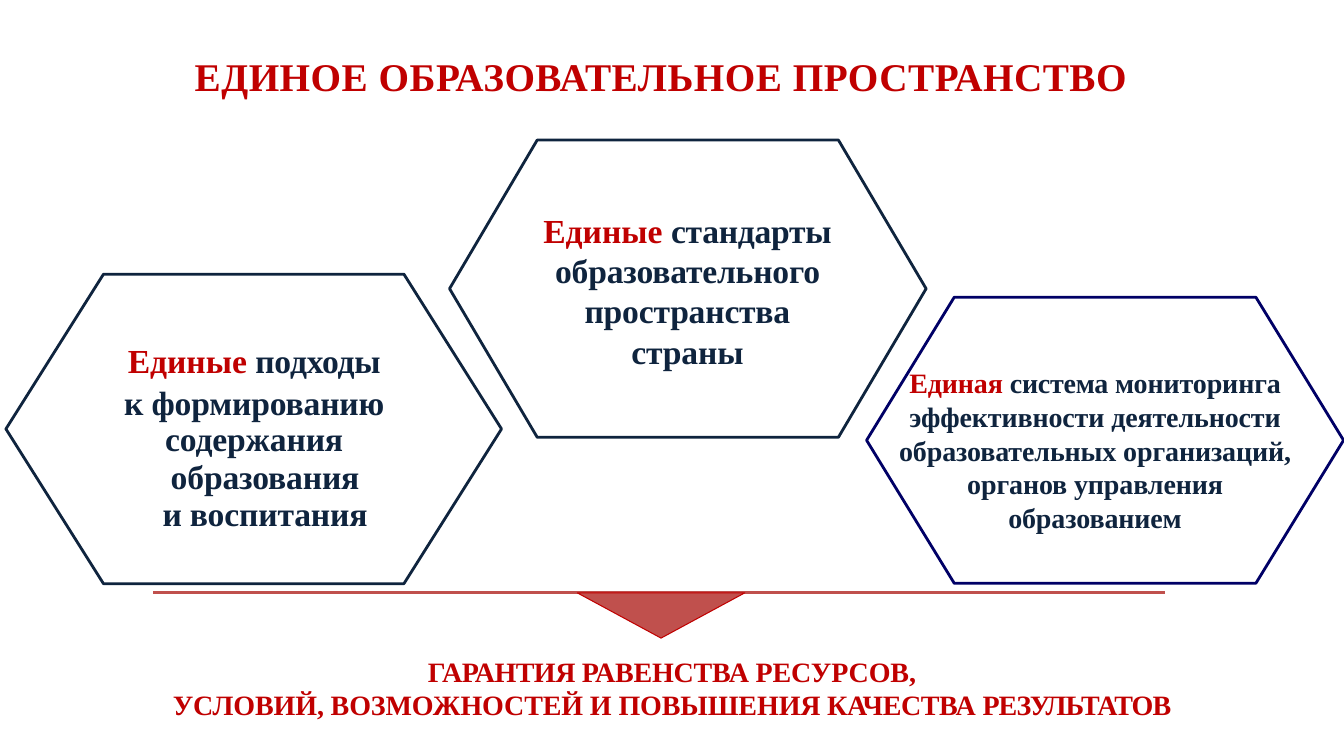
"""Builds the slide on the unified educational space."""
import pptx
import pptx.util
import pptx.dml.color
import pptx.enum.shapes
import pptx.enum.text
import pptx.oxml
from pptx.oxml.ns import qn

Cm, Pt = pptx.util.Cm, pptx.util.Pt
SHAPES = pptx.enum.shapes.MSO_SHAPE
ANCHOR = pptx.enum.text.MSO_ANCHOR

COLOURS = {"red": "C00000", "navy": "0F243E", "blue": "000066",
           "brick": "C0504D", "white": "FFFFFF"}

TITLE = {"box": (0.53, 0.46, 32.26, 2.79), "size": 28, "top": 0.13, "anchor": ANCHOR.MIDDLE,
         "paragraphs": [([("ЕДИНОЕ ОБРАЗОВАТЕЛЬНОЕ ПРОСТРАНСТВО", "red", 40)], {}, 0)]}

GUARANTEE = {"box": (0, 16.46, 33.87, 1.73), "size": 20, "top": 0.03, "anchor": ANCHOR.TOP,
             "paragraphs": [
                 ([("ГАРАНТИЯ ", "red", -40), ("РАВЕНСТВА ", "red", -20),
                   ("РЕСУРСОВ,", "red", -10)], {"space_before": Pt(1)}, 0),
                 ([("УСЛОВИЙ, ВОЗМОЖНОСТЕЙ И ПОВЫШЕНИЯ ", "red", -10),
                   ("КАЧЕСТВА ", "red", -30), ("РЕЗУЛЬТАТОВ", "red", -70)], {}, 0)]}

LOOSE = {"line_spacing": 0.9, "space_before": Pt(3.9)}
EXACT = {"line_spacing": Pt(25.9), "space_before": Pt(0.4)}

HEXAGONS = [
    {"outline": (0.15, 6.91, 12.49, 7.8), "inset": 2.46, "fill": "white", "line": "navy",
     "text": {"box": (1.45, 8.56, 9.88, 4.9), "size": 24, "top": 0.13, "anchor": ANCHOR.TOP,
              "paragraphs": [
                  ([("Единые ", "red", 0), ("подходы", "navy", -20)], LOOSE, 0.03),
                  ([("к формированию содержания", "navy", -10)], LOOSE, 0.03),
                  ([("образования", "navy", -10)], EXACT, 0.58),
                  ([("и воспитания", "navy", -10)], EXACT, 0.58)]}},
    {"outline": (11.33, 3.53, 12.01, 7.49), "inset": 2.21, "fill": None, "line": "navy",
     "text": {"box": (12.12, 5.13, 10.41, 4.27), "size": 24, "top": 0.15, "anchor": ANCHOR.TOP,
              "paragraphs": [
                  ([("Единые ", "red", 0), ("стандарты", "navy", -20)], {}, 0),
                  ([("образовательного пространства", "navy", -15)], {}, 0),
                  ([("страны", "navy", -10)], {}, 0)]}},
    {"outline": (21.84, 7.49, 12.02, 7.21), "inset": 2.21, "fill": None, "line": "blue",
     "text": {"box": (22.5, 9.09, 10.19, 4.42), "size": 20, "top": 0.13, "anchor": ANCHOR.TOP,
              "paragraphs": [
                  ([("Единая ", "red", -10), ("система ", "navy", -20),
                    ("мониторинга эффективности деятельности", "navy", -10)], {}, 0),
                  ([("образовательных организаций,", "navy", -10)], {}, 0),
                  ([("органов управления образованием", "navy", -10)], {}, 0)]}},
]

RULE = {"left": 3.86, "right": 29.36, "y": 14.94}
POINTER = (14.55, 14.94, 4.22, 1.14)


def colour(name):
    """Return the named colour."""
    return pptx.dml.color.RGBColor.from_string(COLOURS[name])


def assign(target, values):
    """Set each attribute of the target from a dict."""
    for key, value in values.items():
        setattr(target, key, value)


def add_text(slide, part):
    """Add a centred bold text block."""
    frame = slide.shapes.add_textbox(*map(Cm, part["box"])).text_frame
    assign(frame, {"word_wrap": True, "vertical_anchor": part["anchor"], "margin_left": 0,
                   "margin_right": 0, "margin_top": Cm(part["top"]), "margin_bottom": 0})
    for index, (runs, spacing, indent) in enumerate(part["paragraphs"]):
        paragraph = frame.add_paragraph() if index else frame.paragraphs[0]
        assign(paragraph, {"alignment": pptx.enum.text.PP_ALIGN.CENTER, **spacing})
        paragraph._p.get_or_add_pPr().set("marL", str(Cm(indent)))
        for words, tint, tracking in runs:
            run = paragraph.add_run()
            run.text = words
            assign(run.font, {"name": "Times New Roman", "size": Pt(part["size"]), "bold": True})
            run.font.color.rgb = colour(tint)
            run._r.get_or_add_rPr().set("spc", str(tracking))


def add_figure(slide, kind, box, fill, line, width):
    """Add a preset shape with plain fill and outline."""
    figure = slide.shapes.add_shape(kind, *map(Cm, box))
    figure.shadow.inherit = False
    if fill:
        figure.fill.solid()
        figure.fill.fore_color.rgb = colour(fill)
    else:
        figure.fill.background()
    figure.line.color.rgb = colour(line)
    figure.line.width = Pt(width)
    return figure


def add_rule(slide):
    """Add the horizontal rule above the conclusion."""
    y = Cm(RULE["y"])
    rule = slide.shapes.add_connector(pptx.enum.shapes.MSO_CONNECTOR.STRAIGHT,
                                      Cm(RULE["left"]), y, Cm(RULE["right"]), y)
    rule.line.color.rgb = colour("brick")
    rule.line.width = Pt(2.25)
    rule._element.spPr.append(pptx.oxml.xmlchemy.OxmlElement("a:effectLst"))


def main():
    """Build and save the slide."""
    deck = pptx.Presentation()
    assign(deck, {"slide_width": Cm(33.87), "slide_height": Cm(19.05)})
    slide = deck.slides.add_slide(deck.slide_layouts[6])
    add_text(slide, TITLE)
    add_rule(slide)
    add_figure(slide, SHAPES.FLOWCHART_MERGE, POINTER, "brick", "red", 0.75)
    add_text(slide, GUARANTEE)
    for hexagon in HEXAGONS:
        outline = add_figure(slide, SHAPES.HEXAGON, hexagon["outline"],
                             hexagon["fill"], hexagon["line"], 2)
        outline.adjustments[0] = hexagon["inset"] / hexagon["outline"][3]
    for hexagon in HEXAGONS:
        add_text(slide, hexagon["text"])
    deck.save("out.pptx")


if __name__ == "__main__":
    main()
